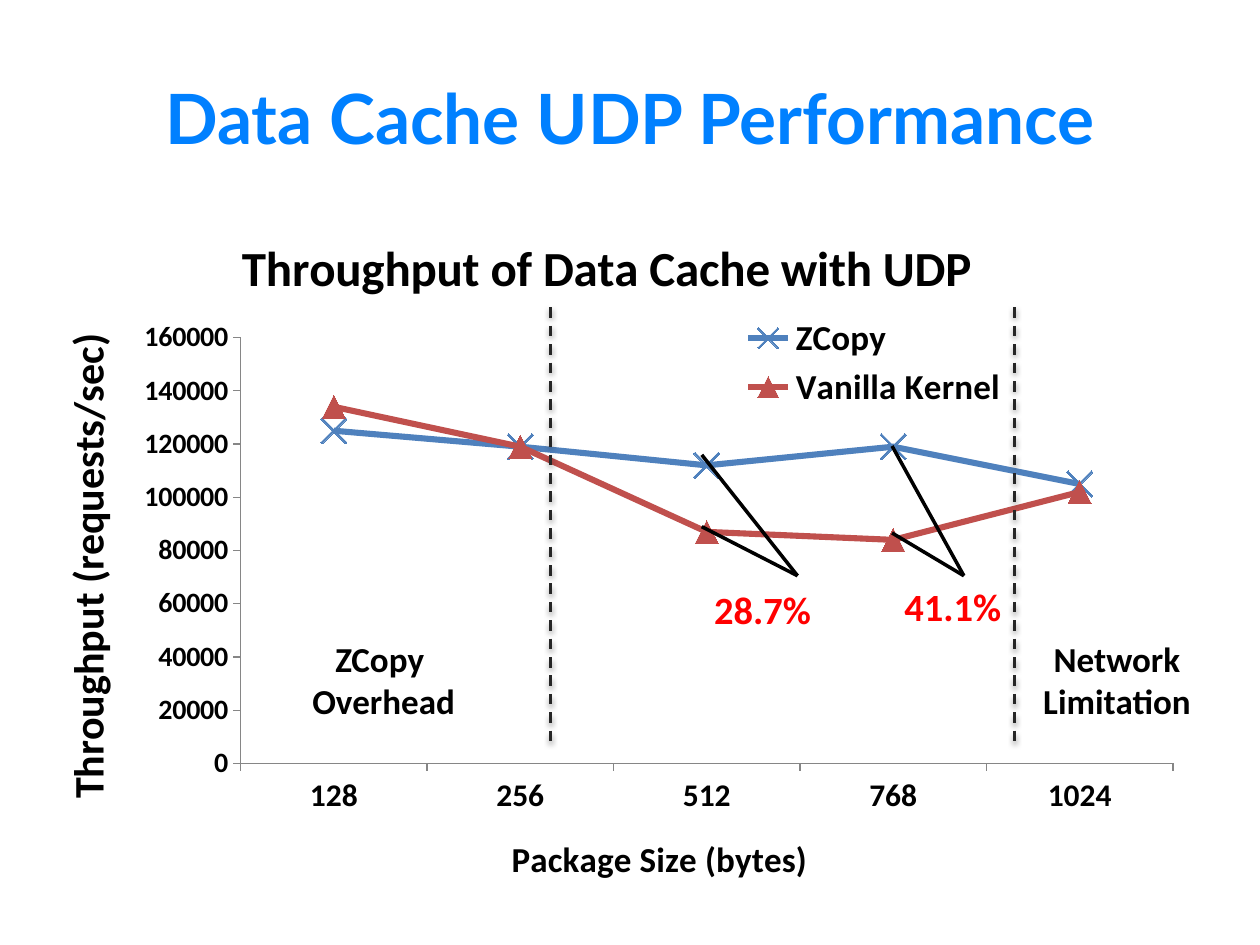
"""Build the data cache UDP performance slide."""
from typing import NamedTuple

from lxml.etree import SubElement
from pptx import Presentation
from pptx.chart.data import CategoryChartData
from pptx.dml.color import RGBColor
from pptx.enum.chart import XL_CHART_TYPE as ChartType, XL_LEGEND_POSITION as LegendPos
from pptx.enum.chart import XL_MARKER_STYLE as Marker, XL_TICK_MARK as Tick
from pptx.enum.dml import MSO_LINE_DASH_STYLE as Dash
from pptx.enum.shapes import MSO_CONNECTOR as Connector
from pptx.enum.text import MSO_ANCHOR as Anchor, MSO_AUTO_SIZE as AutoSize, PP_ALIGN as Align
from pptx.oxml.ns import qn
from pptx.util import Inches, Pt

COLORS = {"title": "0080FF", "text": "000000", "gain": "FF0000", "divider": "262626",
          "axis": "868686", "zcopy": "4F81BD", "vanilla": "C0504D"}
CHART_BOX = (0.28, 1.7, 9.22, 5.54)


class Series(NamedTuple):
    name: str
    values: tuple
    color: str
    marker: Marker
    size: int


class Label(NamedTuple):
    lines: tuple
    box: tuple
    size: int
    color: str
    align: Align


class Gain(NamedTuple):
    tip: tuple
    points: tuple


SERIES = (
    Series("ZCopy", (125000, 119000, 112000, 119000, 105000), "zcopy", Marker.X, 15),
    Series("Vanilla Kernel", (134000, 119000, 87000, 84000, 102000), "vanilla",
           Marker.TRIANGLE, 13),
)
GAINS = (
    Gain((7.65, 4.57), ((7.08, 4.23), (7.08, 3.54))),
    Gain((6.33, 4.57), ((5.57, 4.18), (5.57, 3.61))),
)
LABELS = (
    Label(("41.1%",), (7.08, 4.58, 0.97, 0.47), 22, "gain", Align.LEFT),
    Label(("28.7%",), (5.57, 4.6, 0.97, 0.47), 22, "gain", Align.LEFT),
    Label(("ZCopy ", "Overhead"), (2.37, 5.01, 1.35, 0.77), 20, "text", Align.CENTER),
    Label(("Network", "Limitation"), (8.17, 5.01, 1.39, 0.77), 20, "text", Align.CENTER),
)
DIVIDERS = (4.37, 8.05)


def rgb(name: str) -> RGBColor:
    """Return a named colour."""
    return RGBColor.from_string(COLORS[name])


def set_font(font, size: float, color: str = "text", face: str = "Calibri") -> None:
    """Apply the bold text style of the slide."""
    for key, value in {"name": face, "size": Pt(size), "bold": True}.items():
        setattr(font, key, value)
    font.color.rgb = rgb(color)


def place(element, left: float, top: float, size: tuple = ()) -> None:
    """Pin a chart part at slide inches by a manual layout."""
    for old in element.findall(qn("c:layout")):
        element.remove(old)
    layout = SubElement(element, qn("c:layout"))
    manual = SubElement(layout, qn("c:manualLayout"))
    is_plot = element.tag == qn("c:plotArea")
    chart_left, chart_top, chart_width, chart_height = CHART_BOX
    settings = {"layoutTarget": "inner"} if is_plot else {}
    settings |= {"xMode": "edge", "yMode": "edge",
                 "x": (left - chart_left) / chart_width, "y": (top - chart_top) / chart_height}
    if size:
        settings |= {"w": size[0] / chart_width, "h": size[1] / chart_height}
    for key, value in settings.items():
        SubElement(manual, qn(f"c:{key}")).set("val", str(value))
    if is_plot:
        element.insert(0, layout)
    else:
        element.find(qn("c:overlay")).addprevious(layout)


def add_title(holder, text: str, size: int, left: float, top: float, turn: int = 0) -> None:
    """Write and place a chart or axis title."""
    frame = holder.text_frame
    frame.text = text
    set_font(frame.paragraphs[0].runs[0].font, size)
    frame._txBody.bodyPr.set("rot", str(turn * 60000))
    frame._txBody.bodyPr.set("vert", "horz")
    place(holder._element, left, top)


def style_axis(axis, size: int) -> None:
    """Format the line, ticks and labels of an axis."""
    settings = {"has_major_gridlines": False, "major_tick_mark": Tick.OUTSIDE,
                "minor_tick_mark": Tick.NONE}
    for key, value in settings.items():
        setattr(axis, key, value)
    axis.format.line.color.rgb = rgb("axis")
    set_font(axis.tick_labels.font, size)


def add_throughput_chart(slide) -> None:
    """Add the throughput line chart."""
    data = CategoryChartData(number_format="General")
    data.categories = ["128", "256", "512", "768", "1024"]
    for series in SERIES:
        data.add_series(series.name, series.values)
    chart = slide.shapes.add_chart(ChartType.LINE_MARKERS, *map(Inches, CHART_BOX), data).chart
    chart.font.name = "Calibri"
    chart.font.size = Pt(10)
    chart.plots[0].vary_by_categories = False
    for line, series in zip(chart.plots[0].series, SERIES):
        line.smooth = False
        line.format.line.color.rgb = rgb(series.color)
        line.format.line.width = Pt(3.5)
        line.marker.style = series.marker
        line.marker.size = series.size
        line.marker.format.fill.solid()
        line.marker.format.fill.fore_color.rgb = rgb(series.color)
        line.marker.format.line.color.rgb = rgb(series.color)

    sizes, throughput = chart.category_axis, chart.value_axis
    style_axis(sizes, 18)
    style_axis(throughput, 16)
    for key, value in {"minimum_scale": 0, "maximum_scale": 160000, "major_unit": 20000}.items():
        setattr(throughput, key, value)

    chart.has_title = True
    add_title(chart.chart_title, "Throughput of Data Cache with UDP", 28, 1.85, 1.79)
    add_title(sizes.axis_title, "Package Size (bytes)", 20, 4.01, 6.57)
    add_title(throughput.axis_title, "Throughput (requests/sec)", 24, 0.41, 2.59, -90)
    chart.has_legend = True
    legend = chart.legend
    legend.position = LegendPos.RIGHT
    legend.include_in_layout = True
    set_font(legend.font, 20)
    place(legend._element, 5.94, 2.47, (2, 0.82))
    place(chart._chartSpace.chart.plotArea, 1.91, 2.68, (7.4, 3.38))


def add_line(slide, start: tuple, end: tuple, color: str, width: float):
    """Draw a straight line and return it with its empty effect list."""
    line = slide.shapes.add_connector(Connector.STRAIGHT, *map(Inches, start + end))
    line.line.color.rgb = rgb(color)
    line.line.width = Pt(width)
    return line, SubElement(line._element.spPr, qn("a:effectLst"))


def add_divider(slide, x: float) -> None:
    """Draw a dashed vertical divider with a soft shadow."""
    line, effects = add_line(slide, (x, 2.44), (x, 5.91), "divider", 1.5)
    line.line.dash_style = Dash.DASH
    shadow = SubElement(effects, qn("a:outerShdw"), blurRad=str(Pt(3.1)), dist=str(Pt(1.6)),
                        dir="5400000", rotWithShape="0")
    tint = SubElement(shadow, qn("a:srgbClr"), val=COLORS["text"])
    SubElement(tint, qn("a:alpha"), val="38000")


def add_label(slide, label: Label) -> None:
    """Add a bold text label."""
    frame = slide.shapes.add_textbox(*map(Inches, label.box)).text_frame
    frame.word_wrap = False
    frame.auto_size = AutoSize.SHAPE_TO_FIT_TEXT
    frame.text = "\n".join(label.lines)
    for paragraph in frame.paragraphs:
        paragraph.alignment = label.align
        set_font(paragraph.runs[0].font, label.size, label.color)


def main() -> None:
    """Build and save the slide."""
    deck = Presentation()
    deck.slide_width, deck.slide_height = Inches(10), Inches(7.5)
    slide = deck.slides.add_slide(deck.slide_layouts[5])
    heading = slide.shapes.title
    box = {"left": 0.5, "top": 0.3, "width": 9, "height": 1.25}
    for key, value in box.items():
        setattr(heading, key, Inches(value))
    heading.text_frame.text = "Data Cache UDP Performance"
    heading.text_frame.vertical_anchor = Anchor.MIDDLE
    heading.text_frame.paragraphs[0].alignment = Align.CENTER
    set_font(heading.text_frame.paragraphs[0].runs[0].font, 39.6, "title", "Lato")
    add_throughput_chart(slide)
    for gain in GAINS:
        for point in gain.points:
            add_line(slide, gain.tip, point, "text", 2)
    for x in DIVIDERS:
        add_divider(slide, x)
    for label in LABELS:
        add_label(slide, label)
    deck.save("out.pptx")


if __name__ == "__main__":
    main()
